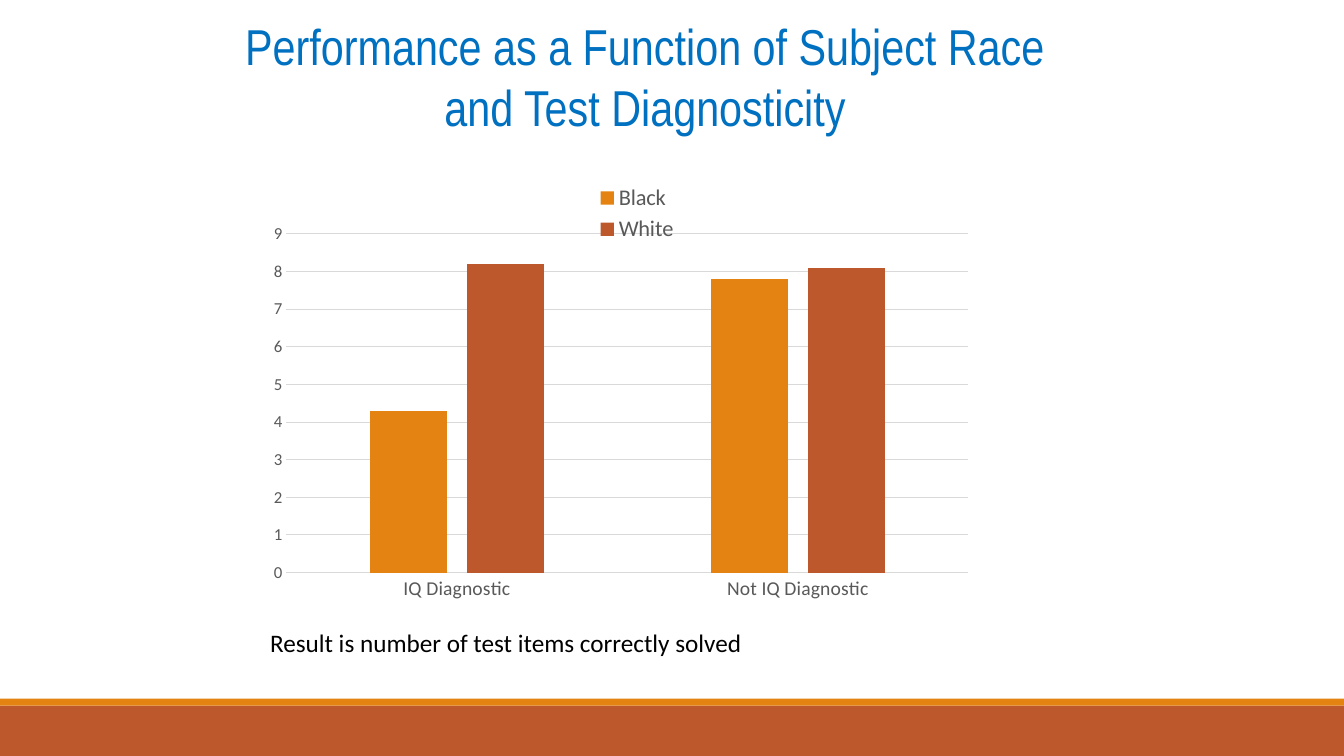
"""Builds a slide with a clustered column chart of test performance."""
from lxml import etree
from pptx import Presentation
from pptx.chart.data import CategoryChartData
from pptx.dml.color import RGBColor
from pptx.enum.chart import XL_CHART_TYPE, XL_LEGEND_POSITION, XL_TICK_MARK
from pptx.enum.shapes import MSO_SHAPE
from pptx.enum.text import MSO_ANCHOR, MSO_AUTO_SIZE, PP_ALIGN
from pptx.oxml.ns import qn
from pptx.util import Pt

COLUMN = XL_CHART_TYPE.COLUMN_CLUSTERED
BOTTOM = XL_LEGEND_POSITION.BOTTOM
NO_TICK = XL_TICK_MARK.NONE
RECT = MSO_SHAPE.RECTANGLE
TOP = MSO_ANCHOR.TOP
FIXED = MSO_AUTO_SIZE.NONE
LEFT, CENTER = PP_ALIGN.LEFT, PP_ALIGN.CENTER

ORANGE = RGBColor(0xE4, 0x83, 0x12)
RUST = RGBColor(0xBD, 0x58, 0x2C)
BLUE = RGBColor(0x00, 0x70, 0xC0)
BLACK = RGBColor(0x00, 0x00, 0x00)
GRAY = RGBColor(0x59, 0x59, 0x59)
SILVER = RGBColor(0xD9, 0xD9, 0xD9)


def style(font, size, color, name="Calibri"):
    font.size, font.name = Pt(size), name
    font.color.rgb = color


def write(shape, lines, size, color, name="Calibri", align=LEFT):
    frame = shape.text_frame
    frame.word_wrap = True
    frame.auto_size = FIXED
    frame.vertical_anchor = TOP
    frame.text = "\n".join(lines)
    for para in frame.paragraphs:
        para.alignment = align
        for run in para.runs:
            style(run.font, size, color, name)


deck = Presentation()
deck.slide_width, deck.slide_height = Pt(960), Pt(540)
slide = deck.slides.add_slide(deck.slide_layouts[5])
shapes = slide.shapes

for top, height, color in [(504, 36, RUST), (499, 5, ORANGE)]:
    band = shapes.add_shape(RECT, 0, Pt(top), Pt(960), Pt(height))
    band.shadow.inherit = False
    band.fill.solid()
    band.fill.fore_color.rgb = color
    band.line.fill.background()

title = shapes.title
title.left, title.top = Pt(77.8), Pt(7.2)
title.width, title.height = Pt(774), Pt(94.4)
write(title, ["Performance as a Function of Subject Race ", "and Test Diagnosticity "],
      36, BLUE, name="Arial Narrow", align=CENTER)

data = CategoryChartData()
data.categories = ["IQ Diagnostic", "Not IQ Diagnostic"]
data.add_series("Black", [4.3, 7.8])
data.add_series("White", [8.2, 8.1])
frame = shapes.add_chart(COLUMN, Pt(185.8), Pt(119.5), Pt(522.7), Pt(315.4), data)
chart = frame.chart
style(chart.font, 12, BLACK)
chart.has_title = False
chart.has_legend = True
legend = chart.legend
legend.position = BOTTOM
legend.include_in_layout = False
style(legend.font, 16, GRAY)

plot = chart.plots[0]
plot.gap_width, plot.overlap = 219, -27
plot.vary_by_categories = False
for series, color in zip(plot.series, [ORANGE, RUST]):
    series.format.fill.solid()
    series.format.fill.fore_color.rgb = color

cats, vals = chart.category_axis, chart.value_axis
for axis, size in [(cats, 14), (vals, 12)]:
    axis.major_tick_mark = axis.minor_tick_mark = NO_TICK
    style(axis.tick_labels.font, size, GRAY)
vals.minimum_scale, vals.maximum_scale, vals.major_unit = 0, 9, 1
vals.format.line.fill.background()
for line in [cats.format.line, vals.major_gridlines.format.line]:
    line.color.rgb = SILVER
    line.width = Pt(0.75)

area = chart._chartSpace.chart.plotArea
key = chart._chartSpace.chart.find(qn("c:legend"))
for part, spot, inner in [(area, (0.036, 0.151, 0.932, 0.767), True),
                          (key, (0.45, 0.03, 0.13, 0.15), False)]:
    for old in part.findall(qn("c:layout")):
        part.remove(old)
    layout = etree.Element(qn("c:layout"))
    part.insert(0 if inner else 1, layout)
    manual = etree.SubElement(layout, qn("c:manualLayout"))
    rules = [("layoutTarget", "inner")] if inner else []
    rules += [("xMode", "edge"), ("yMode", "edge"), *zip("xywh", spot)]
    for tag, value in rules:
        etree.SubElement(manual, qn("c:" + tag)).set("val", str(value))

note = shapes.add_textbox(Pt(185.8), Pt(444.2), Pt(572.4), Pt(29))
write(note, ["Result is number of test items correctly solved"], 18, BLACK)

deck.save("out.pptx")
